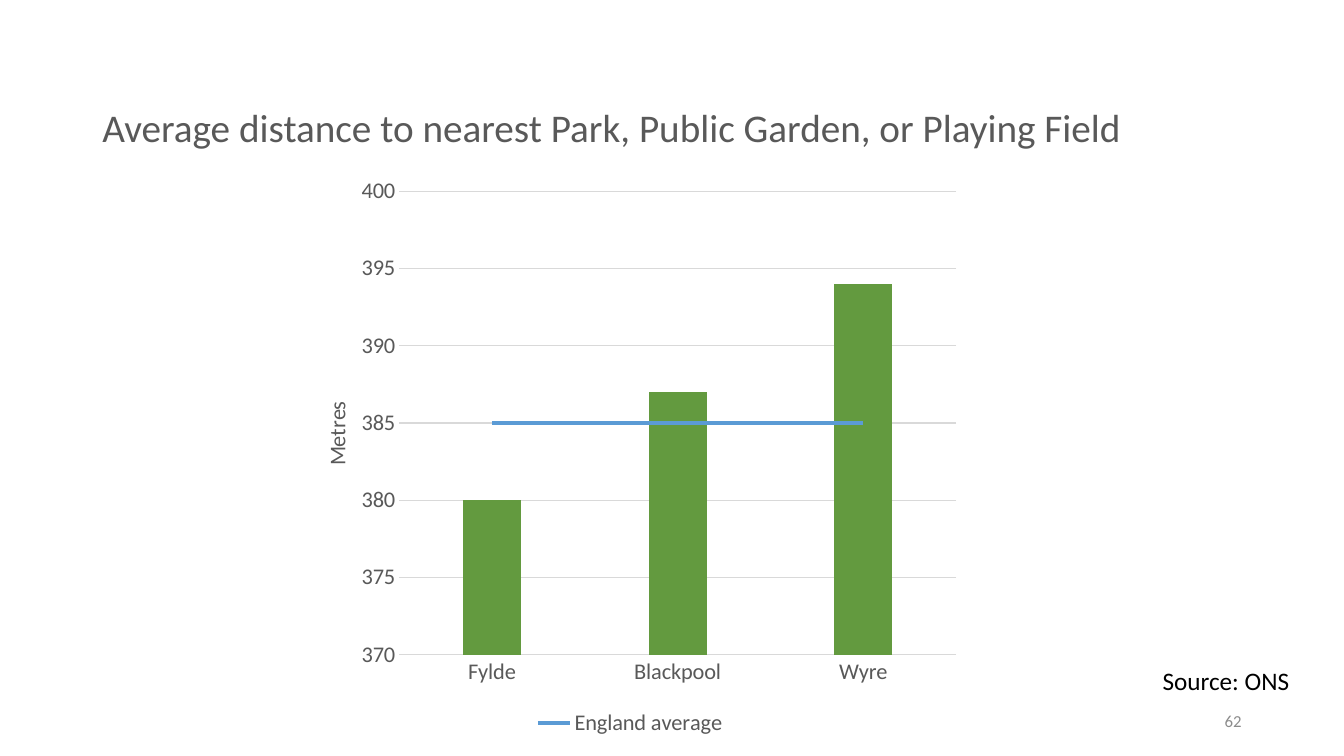
from dataclasses import dataclass

from lxml.etree import SubElement
from pptx import Presentation
from pptx.chart.data import CategoryChartData
from pptx.dml.color import RGBColor
from pptx.enum.chart import XL_CHART_TYPE, XL_LEGEND_POSITION, XL_MARKER_STYLE, XL_TICK_MARK
from pptx.enum.text import MSO_ANCHOR, PP_ALIGN
from pptx.oxml import parse_xml
from pptx.oxml.ns import nsdecls, qn
from pptx.util import Cm, Pt


@dataclass(frozen=True)
class Theme:
    font: str = "Calibri"
    grey: RGBColor = RGBColor(0x59, 0x59, 0x59)
    pale: RGBColor = RGBColor(0x8C, 0x8C, 0x8C)
    black: RGBColor = RGBColor(0, 0, 0)
    grid: RGBColor = RGBColor(0xD9, 0xD9, 0xD9)
    bar: RGBColor = RGBColor(0x63, 0x9A, 0x3F)
    average: RGBColor = RGBColor(0x5B, 0x9B, 0xD5)
    title_size: Pt = Pt(28)
    source_size: Pt = Pt(18)
    chart_size: Pt = Pt(16)
    number_size: Pt = Pt(12)


THEME = Theme()


def set_font(font, size, color):
    font.name = THEME.font
    font.size = size
    font.bold = False
    font.color.rgb = color


def add_text(s, text, box, size, color, align=PP_ALIGN.LEFT, anchor=MSO_ANCHOR.MIDDLE):
    tf = s.shapes.add_textbox(*map(Cm, box)).text_frame
    tf.word_wrap = True
    tf.vertical_anchor = anchor
    tf.text = text
    p = tf.paragraphs[0]
    p.alignment = align
    set_font(p.runs[0].font, size, color)


def remove_children(parent, tag):
    for child in parent.findall(qn(tag)):
        parent.remove(child)


def make_layout(**values):
    layout = parse_xml(f"<c:layout {nsdecls('c')}><c:manualLayout/></c:layout>")
    for name, value in values.items():
        SubElement(layout[0], qn(f"c:{name}")).set("val", str(value))
    return layout


def move_last_series_to_line(plot_area):
    bar_chart = plot_area.find(qn("c:barChart"))
    ser = bar_chart.findall(qn("c:ser"))[-1]
    remove_children(ser, "c:invertIfNegative")
    line_chart = parse_xml(
        f"<c:lineChart {nsdecls('c')}><c:grouping val='standard'/>"
        "<c:varyColors val='0'/><c:marker val='1'/></c:lineChart>")
    line_chart.insert(2, ser)
    for axis in bar_chart.findall(qn("c:axId")):
        SubElement(line_chart, qn("c:axId")).set("val", axis.get("val"))
    bar_chart.addnext(line_chart)


def style_axes(chart):
    cat, val = chart.category_axis, chart.value_axis
    for axis in (cat, val):
        axis.major_tick_mark = axis.minor_tick_mark = XL_TICK_MARK.NONE
        set_font(axis.tick_labels.font, THEME.chart_size, THEME.grey)
    set_line(cat.format.line, THEME.grid, Pt(0.75))
    val.format.line.fill.background()
    set_line(val.major_gridlines.format.line, THEME.grid, Pt(0.75))
    val.minimum_scale, val.maximum_scale, val.major_unit = 370, 400, 5
    val.tick_labels.number_format = "0"
    val.tick_labels.number_format_is_linked = False
    title = val.axis_title
    tf = title.text_frame
    tf.text = "Metres"
    set_font(tf.paragraphs[0].runs[0].font, THEME.chart_size, THEME.grey)
    title_xml = val._element.find(qn("c:title"))
    remove_children(title_xml, "c:layout")
    title_xml.find(qn("c:tx")).addnext(
        make_layout(xMode="edge", yMode="edge", x=0.04, y=0.4))


def set_line(line, color, width):
    line.color.rgb = color
    line.width = width


def style_legend(chart):
    chart.has_legend = True
    legend = chart.legend
    legend.position = XL_LEGEND_POSITION.BOTTOM
    legend.include_in_layout = False
    set_font(legend.font, THEME.chart_size, THEME.grey)
    position = chart._chartSpace.find(".//" + qn("c:legendPos"))
    position.addnext(parse_xml(
        f"<c:legendEntry {nsdecls('c')}><c:idx val='0'/><c:delete val='1'/></c:legendEntry>"))


def add_distance_chart(s, box):
    data = CategoryChartData(number_format="0")
    data.categories = ["Fylde", "Blackpool", "Wyre"]
    data.add_series("Series 1", (380, 387, 394))
    data.add_series("England average", (385, 385, 385))
    chart = s.shapes.add_chart(XL_CHART_TYPE.COLUMN_CLUSTERED, *map(Cm, box), data).chart
    chart.has_title = False
    set_font(chart.font, THEME.chart_size, THEME.grey)
    plot_area = chart._chartSpace.find(".//" + qn("c:plotArea"))
    move_last_series_to_line(plot_area)

    bars, line = chart.plots
    bars.gap_width = 219
    bars.vary_by_categories = False
    fill = bars.series[0].format.fill
    fill.solid()
    fill.fore_color.rgb = THEME.bar
    average = line.series[0]
    average.smooth = False
    average.marker.style = XL_MARKER_STYLE.NONE
    set_line(average.format.line, THEME.average, Pt(3))

    style_axes(chart)
    style_legend(chart)
    remove_children(plot_area, "c:layout")
    plot_area.insert(0, make_layout(
        layoutTarget="inner", xMode="edge", yMode="edge", x=0.16, y=0.04, w=0.82, h=0.81))


def main():
    prs = Presentation()
    prs.slide_width, prs.slide_height = Cm(33.87), Cm(19.05)
    s = prs.slides.add_slide(prs.slide_layouts[6])
    add_text(s, "Average distance to nearest Park, Public Garden, or Playing Field",
             (2.33, 1.83, 29.21, 2.74), THEME.title_size, THEME.grey)
    add_text(s, "62", (23.92, 17.66, 7.62, 1.01), THEME.number_size, THEME.pale, PP_ALIGN.RIGHT)
    add_distance_chart(s, (7.32, 4.24, 17.12, 14.43))
    add_text(s, "Source: ONS", (26.31, 16.64, 6.43, 1.03), THEME.source_size, THEME.black,
             PP_ALIGN.RIGHT, MSO_ANCHOR.TOP)
    prs.save("out.pptx")


if __name__ == "__main__":
    main()
